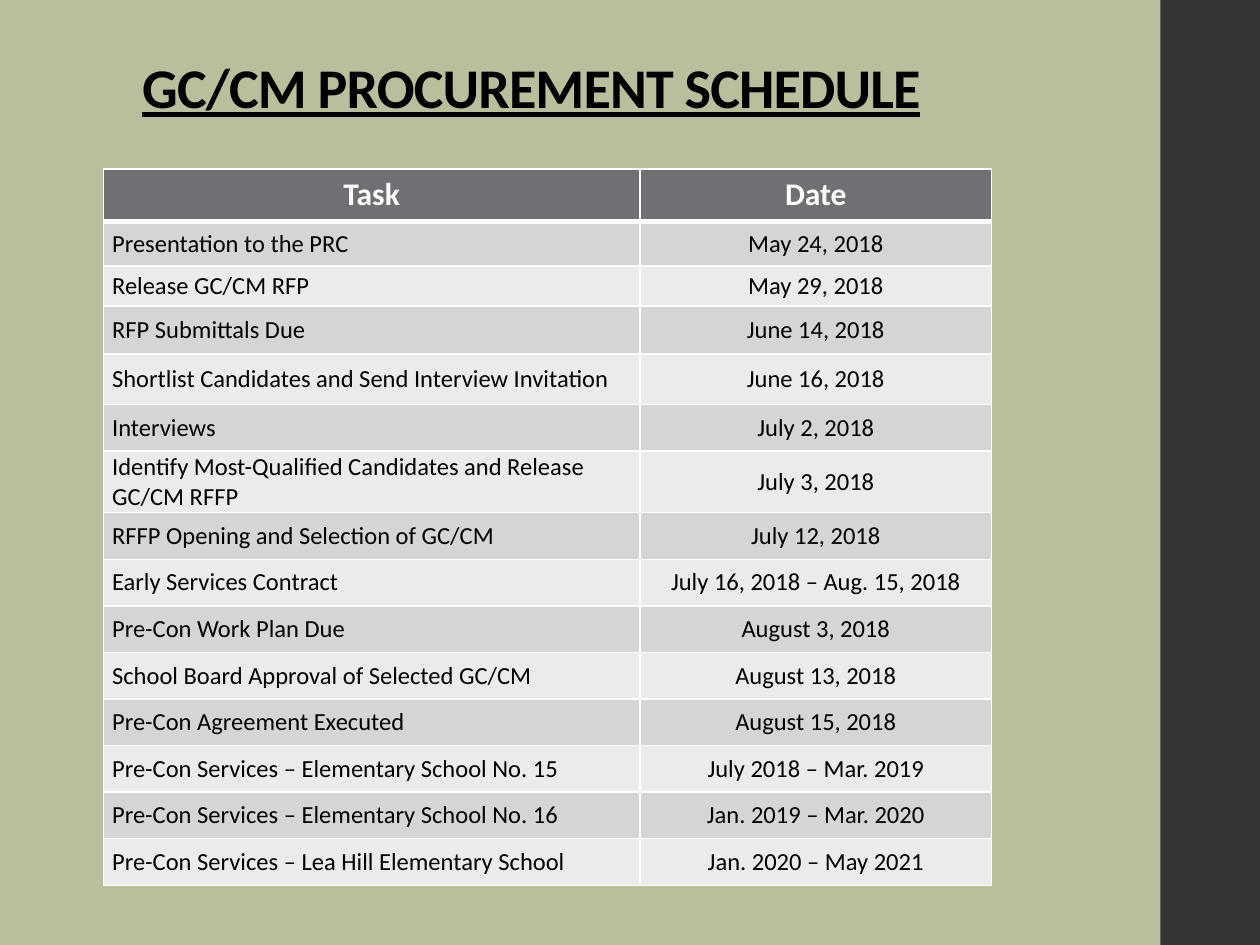
from lxml.etree import SubElement
from pptx import Presentation
from pptx.dml.color import RGBColor
from pptx.enum.shapes import MSO_SHAPE
from pptx.enum.text import MSO_ANCHOR, PP_ALIGN
from pptx.oxml.ns import qn
from pptx.util import Inches, Pt

SAGE = RGBColor(0xBB, 0xBE, 0x9C)
CHARCOAL = RGBColor(0x35, 0x35, 0x37)
HEADER_GRAY = RGBColor(0x6F, 0x6F, 0x74)
DARK_BAND = RGBColor(0xD5, 0xD5, 0xD6)
LIGHT_BAND = RGBColor(0xEB, 0xEB, 0xEB)
BLACK = RGBColor(0, 0, 0)
WHITE = RGBColor(0xFF, 0xFF, 0xFF)

# Task, date and row height in grid rows
SCHEDULE = [
    ("Task", "Date", 4.2),
    ("Presentation to the PRC", "May 24, 2018", 3.5),
    ("Release GC/CM RFP", "May 29, 2018", 3.2),
    ("RFP Submittals Due", "June 14, 2018", 3.8),
    ("Shortlist Candidates and Send Interview Invitation", "June 16, 2018", 4),
    ("Interviews", "July 2, 2018", 3.7),
    ("Identify Most-Qualified Candidates and Release GC/CM RFFP", "July 3, 2018", 4.9),
    ("RFFP Opening and Selection of GC/CM", "July 12, 2018", 3.7),
    ("Early Services Contract", "July 16, 2018 – Aug. 15, 2018", 3.7),
    ("Pre-Con Work Plan Due", "August 3, 2018", 3.7),
    ("School Board Approval of Selected GC/CM", "August 13, 2018", 3.7),
    ("Pre-Con Agreement Executed", "August 15, 2018", 3.7),
    ("Pre-Con Services – Elementary School No. 15", "July 2018 – Mar. 2019", 3.7),
    ("Pre-Con Services – Elementary School No. 16", "Jan. 2019 – Mar. 2020", 3.7),
    ("Pre-Con Services – Lea Hill Elementary School", "Jan. 2020 – May 2021", 3.7),
]


def format_run(paragraph, size, color, bold):
    font = paragraph.runs[0].font
    font.name = "Calibri"
    font.size = Pt(size)
    font.bold = bold
    font.color.rgb = color
    return font


def set_borders(cell, widths):
    properties = cell._tc.get_or_add_tcPr()
    for position, (side, width) in enumerate(widths.items()):
        line = SubElement(properties, qn(f"a:ln{side}"), w=str(Pt(width)))
        fill = SubElement(line, qn("a:solidFill"))
        SubElement(fill, qn("a:srgbClr"), val=str(WHITE))
        properties.insert(position, line)


presentation = Presentation()
presentation.slide_width = Inches(10)
presentation.slide_height = Inches(7.5)
slide = presentation.slides.add_slide(presentation.slide_layouts[6])

# Grid of 100 columns by 75 rows
column = presentation.slide_width / 100
row = presentation.slide_height / 75

# Background and side band
slide.background.fill.solid()
slide.background.fill.fore_color.rgb = SAGE
side_band = slide.shapes.add_shape(
    MSO_SHAPE.RECTANGLE, int(92.1 * column), 0, int(8 * column), int(75 * row))
side_band.shadow.inherit = False
side_band.fill.solid()
side_band.fill.fore_color.rgb = CHARCOAL
side_band.line.fill.background()

# Title
title = slide.shapes.add_textbox(
    int(10.3 * column), int(4 * row), int(79.5 * column), int(6.1 * row))
title.text_frame.word_wrap = True
title.text_frame.vertical_anchor = MSO_ANCHOR.BOTTOM
title.text_frame.text = "GC/CM PROCUREMENT SCHEDULE"
paragraph = title.text_frame.paragraphs[0]
paragraph.line_spacing = 0.9
title_font = format_run(paragraph, 32, BLACK, True)
title_font.underline = True
paragraph.runs[0]._r.get_or_add_rPr().set("spc", "-50")

# Schedule table
table_height = sum(height for _, _, height in SCHEDULE)
table = slide.shapes.add_table(
    len(SCHEDULE), 2, int(8.2 * column), int(13.4 * row),
    int(70.5 * column), int(table_height * row)).table
for table_column, width in zip(table.columns, (42.6, 27.9)):
    table_column.width = int(width * column)

for row_index, (task, date, height) in enumerate(SCHEDULE):
    table.rows[row_index].height = int(height * row)
    is_header = row_index == 0
    band = DARK_BAND if row_index % 2 else LIGHT_BAND
    for column_index, text in enumerate((task, date)):
        cell = table.cell(row_index, column_index)
        cell.text_frame.text = text
        cell.fill.solid()
        cell.fill.fore_color.rgb = HEADER_GRAY if is_header else band
        paragraph = cell.text_frame.paragraphs[0]
        if is_header or column_index == 1:
            paragraph.alignment = PP_ALIGN.CENTER
        if is_header:
            format_run(paragraph, 18, WHITE, True)
        else:
            format_run(paragraph, 14, BLACK, False)
            cell.vertical_anchor = MSO_ANCHOR.MIDDLE
            cell.margin_left = cell.margin_right = int(0.7 * column)
            cell.margin_top = cell.margin_bottom = 0
        # A thicker rule separates the header from the body
        set_borders(cell, {"L": 1, "R": 1, "T": 3 if row_index == 1 else 1,
                           "B": 3 if is_header else 1})

presentation.save("out.pptx")
